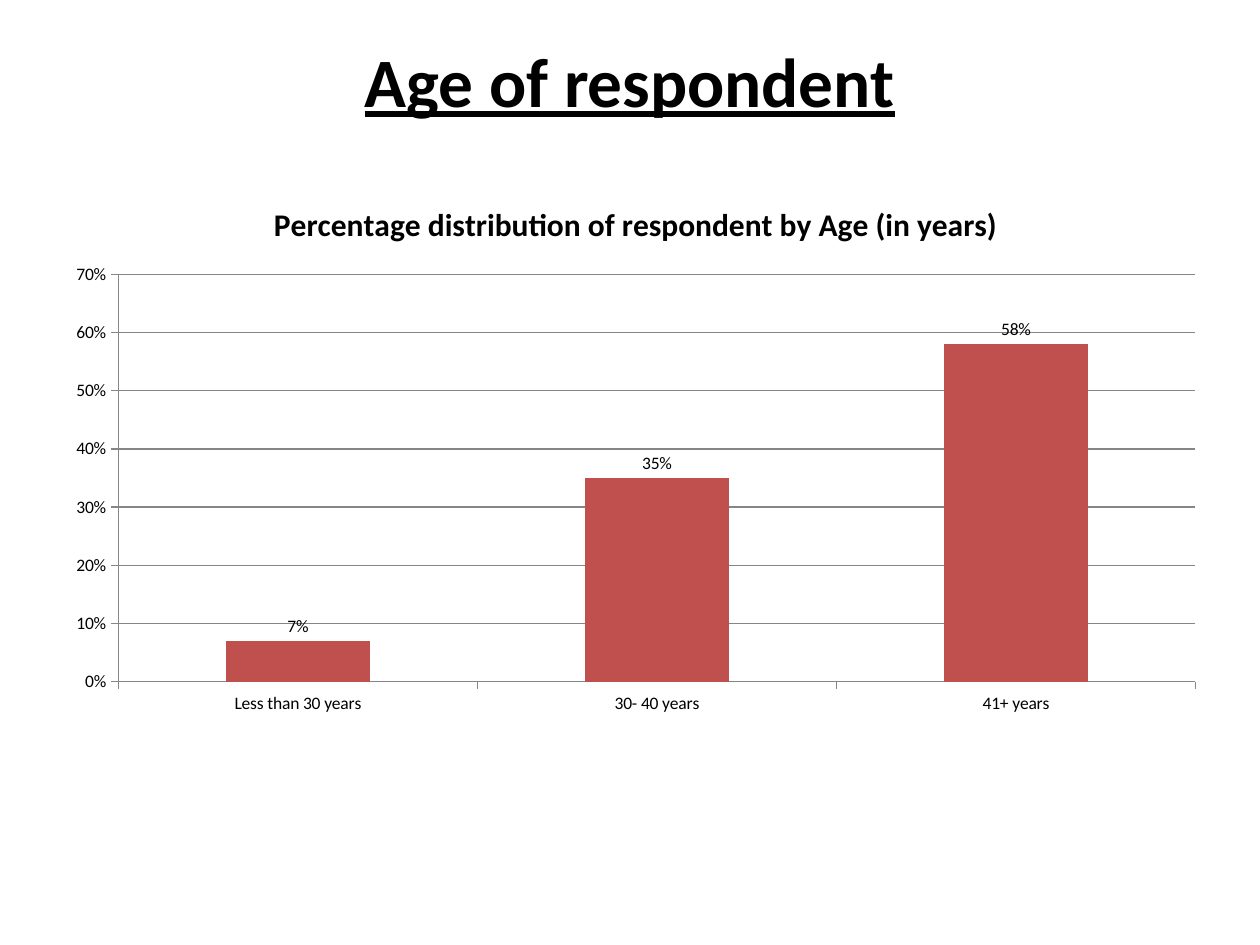
from dataclasses import dataclass

from pptx import Presentation
from pptx.chart.data import CategoryChartData
from pptx.dml.color import RGBColor
from pptx.enum.chart import XL_CHART_TYPE, XL_LABEL_POSITION, XL_TICK_MARK
from pptx.enum.text import MSO_ANCHOR, PP_ALIGN
from pptx.util import Cm, Pt

COLUMNS = XL_CHART_TYPE.COLUMN_CLUSTERED
OUTSIDE_END = XL_LABEL_POSITION.OUTSIDE_END
TICK_OUTSIDE = XL_TICK_MARK.OUTSIDE
TOP = MSO_ANCHOR.TOP
CENTER = PP_ALIGN.CENTER
TITLE_ONLY = 5


@dataclass(frozen=True)
class Theme:
    font: str = "Calibri"
    text: RGBColor = RGBColor(0x00, 0x00, 0x00)
    bar: RGBColor = RGBColor(0xC0, 0x50, 0x4D)
    line: RGBColor = RGBColor(0x86, 0x86, 0x86)
    title_size: float = 39.6
    chart_title_size: float = 18
    label_size: float = 10


theme = Theme()


def format_font(font, size, bold=False, underline=False):
    font.name = theme.font
    font.size = Pt(size)
    font.bold = bold
    font.underline = underline
    font.color.rgb = theme.text


def write_text(text_frame, text, **font_format):
    paragraph = text_frame.paragraphs[0]
    paragraph.alignment = CENTER
    run = paragraph.add_run()
    run.text = text
    format_font(run.font, **font_format)


presentation = Presentation()
presentation.slide_width = Cm(25.4)
presentation.slide_height = Cm(19.05)
slide = presentation.slides.add_slide(presentation.slide_layouts[TITLE_ONLY])

# Title
title = slide.shapes.title
title.left, title.top, title.width, title.height = Cm(1.27), Cm(0.76), Cm(22.86), Cm(3.18)
title.text_frame.vertical_anchor = TOP
title.text_frame.margin_top = 0
write_text(title.text_frame, "Age of respondent",
           size=theme.title_size, bold=True, underline=True)

# Age chart
age_data = CategoryChartData(number_format="0%")
age_data.categories = ["Less than 30 years", "30- 40 years", "41+ years"]
age_data.add_series("Series 1", [0.07, 0.35, 0.58])
chart = slide.shapes.add_chart(
    COLUMNS, Cm(1.07), Cm(3.61), Cm(23.5), Cm(11), age_data).chart
format_font(chart.font, theme.label_size)
chart.has_legend = False
chart.has_title = True
write_text(chart.chart_title.text_frame,
           "Percentage distribution of respondent by Age (in years)",
           size=theme.chart_title_size, bold=True)

plot = chart.plots[0]
plot.gap_width = 150
plot.vary_by_categories = False
age_series = plot.series[0]
age_series.format.fill.solid()
age_series.format.fill.fore_color.rgb = theme.bar

labels = age_series.data_labels
labels.show_value = True
labels.position = OUTSIDE_END
labels.number_format = "0%"
labels.number_format_is_linked = False
format_font(labels.font, theme.label_size)

# Axes and gridlines
value_axis = chart.value_axis
value_axis.minimum_scale = 0
value_axis.maximum_scale = 0.7
value_axis.major_unit = 0.1
value_axis.has_major_gridlines = True
value_axis.tick_labels.number_format = "0%"
value_axis.tick_labels.number_format_is_linked = False
for axis in (chart.category_axis, value_axis):
    axis.major_tick_mark = TICK_OUTSIDE
    format_font(axis.tick_labels.font, theme.label_size)
for ruled in (chart.category_axis, value_axis, value_axis.major_gridlines):
    ruled.format.line.color.rgb = theme.line
    ruled.format.line.width = Pt(0.75)

presentation.save("out.pptx")
